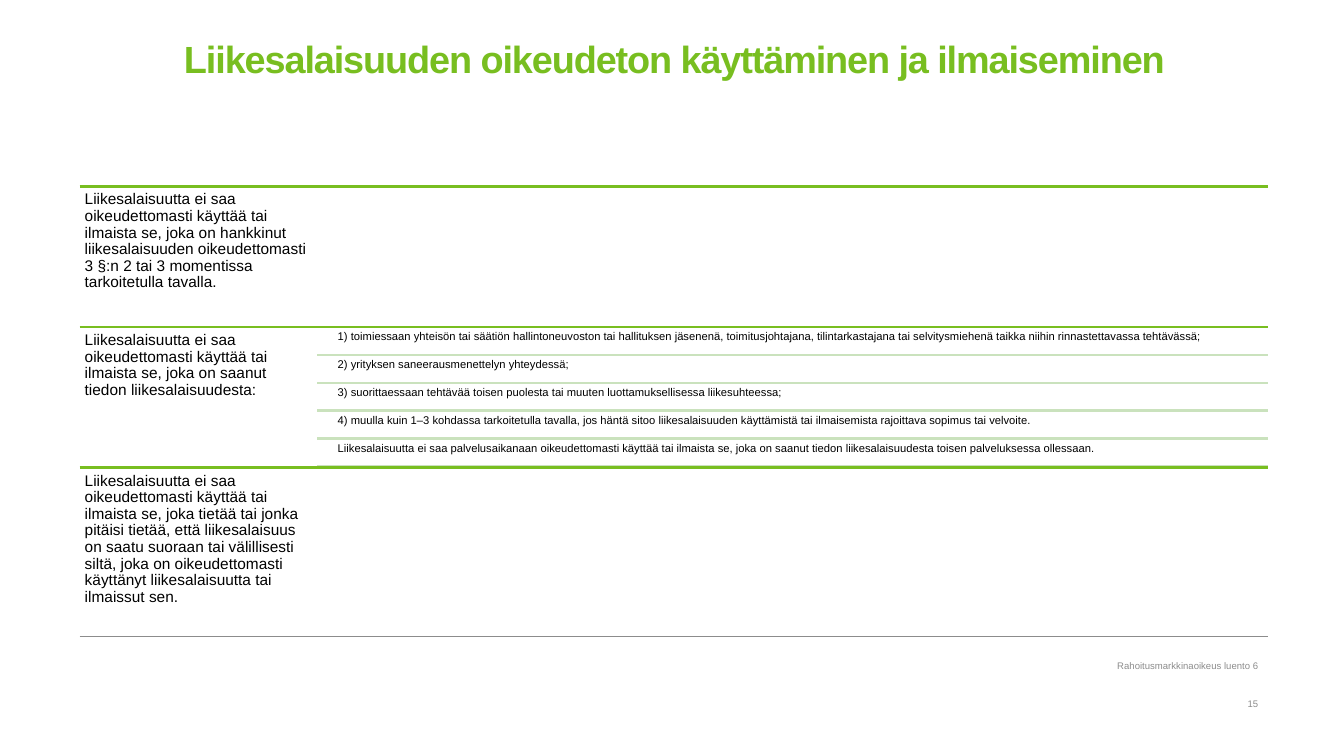
"""Build the slide on unlawful use and disclosure of trade secrets."""
from dataclasses import dataclass

from lxml.etree import SubElement
from pptx import Presentation
from pptx.dml.color import RGBColor
from pptx.enum.shapes import MSO_CONNECTOR as Conn
from pptx.enum.text import MSO_ANCHOR as Anchor, MSO_AUTO_SIZE as AutoSize, PP_ALIGN as Align
from pptx.oxml.ns import qn
from pptx.slide import Slide
from pptx.text.text import TextFrame, _Run as Run
from pptx.util import Inches, Pt

COLORS = {"green": "78BE20", "pale": "CAE2BD", "text": "000000", "grey": "8C8C8C"}
FONT = "Arial"
LEFT, TOP = 0.79, 1.85
WIDTH, COLUMNS = 11.79, 5
COL = WIDTH / COLUMNS
ROW = 1.395
RIGHT = LEFT + WIDTH
ITEM_LEFT, ITEM_OFFSET = 3.32, 0.01
ITEM_STEP, ITEM_HEIGHT = 0.277, 0.26


@dataclass(frozen=True)
class Rule:
    """A prohibition with its optional cases."""

    text: str
    cases: tuple[str, ...] = ()


@dataclass(frozen=True)
class Footer:
    """A right-aligned note at the foot of the slide."""

    text: str
    top: float


RULES = [
    Rule("Liikesalaisuutta ei saa oikeudettomasti käyttää tai ilmaista se, joka on hankkinut "
         "liikesalaisuuden oikeudettomasti 3 §:n 2 tai 3 momentissa tarkoitetulla tavalla."),
    Rule("Liikesalaisuutta ei saa oikeudettomasti käyttää tai ilmaista se, joka on saanut "
         "tiedon liikesalaisuudesta:",
         ("1) toimiessaan yhteisön tai säätiön hallintoneuvoston tai hallituksen jäsenenä, "
          "toimitusjohtajana, tilintarkastajana tai selvitysmiehenä taikka niihin "
          "rinnastettavassa tehtävässä;",
          "2) yrityksen saneerausmenettelyn yhteydessä;",
          "3) suorittaessaan tehtävää toisen puolesta tai muuten luottamuksellisessa "
          "liikesuhteessa;",
          "4) muulla kuin 1–3 kohdassa tarkoitetulla tavalla, jos häntä sitoo liikesalaisuuden "
          "käyttämistä tai ilmaisemista rajoittava sopimus tai velvoite.",
          "Liikesalaisuutta ei saa palvelusaikanaan oikeudettomasti käyttää tai ilmaista se, "
          "joka on saanut tiedon liikesalaisuudesta toisen palveluksessa ollessaan.")),
    Rule("Liikesalaisuutta ei saa oikeudettomasti käyttää tai ilmaista se, joka tietää tai "
         "jonka pitäisi tietää, että liikesalaisuus on saatu suoraan tai välillisesti siltä, "
         "joka on oikeudettomasti käyttänyt liikesalaisuutta tai ilmaissut sen."),
]
FOOTERS = [Footer("Rahoitusmarkkinaoikeus luento 6", 6.51), Footer("15", 6.89)]


def add_line(s: Slide, left: float, y: float, color: str, width: float) -> None:
    """Draw a horizontal line to the right margin."""
    line = s.shapes.add_connector(Conn.STRAIGHT, Inches(left), Inches(y), Inches(RIGHT), Inches(y))
    line.line.color.rgb = RGBColor.from_string(COLORS[color])
    line.line.width = Pt(width)
    SubElement(line._element.spPr, qn("a:effectLst"))


def fill_text(tf: TextFrame, text: str, size: float, color: str, align: Align,
              spacing: float, insets: tuple[float, float, float, float]) -> Run:
    """Write one formatted paragraph and return its run."""
    tf.word_wrap = True
    tf.auto_size = AutoSize.NONE
    tf.margin_left, tf.margin_top, tf.margin_right, tf.margin_bottom = map(Inches, insets)
    p = tf.paragraphs[0]
    p.alignment, p.line_spacing = align, spacing
    r = p.add_run()
    r.text = text
    r.font.name, r.font.size = FONT, Pt(size)
    r.font.color.rgb = RGBColor.from_string(COLORS[color])
    return r


def add_text(s: Slide, left: float, top: float, width: float, height: float,
             text: str, size: float, inset: float) -> None:
    """Add a left-aligned body text box."""
    box = s.shapes.add_textbox(Inches(left), Inches(top), Inches(width), Inches(height))
    fill_text(box.text_frame, text, size, "text", Align.LEFT, 0.9, (inset,) * 4)


def add_title(s: Slide, text: str) -> None:
    """Place and format the title."""
    sp = s.shapes.title
    sp.left, sp.top, sp.width, sp.height = map(Inches, (LEFT, 0.42, WIDTH, 1.31))
    sp.text_frame.vertical_anchor = Anchor.TOP
    r = fill_text(sp.text_frame, text, 27, "green", Align.CENTER, 0.85, (0, 0, 0, 0))
    r.font.bold = True
    r._r.get_or_add_rPr().set("spc", "-80")


def add_rule(s: Slide, rule: Rule, top: float) -> None:
    """Draw one rule row with its cases."""
    add_line(s, LEFT, top, "green", 2)
    add_text(s, LEFT, top, COL, ROW, rule.text, 11, 0.05)
    for i, case in enumerate(rule.cases):
        y = top + ITEM_OFFSET + i * ITEM_STEP
        add_text(s, ITEM_LEFT, y, RIGHT - ITEM_LEFT, ITEM_HEIGHT, case, 8, 0.03)
        add_line(s, LEFT + COL, top + (i + 1) * ITEM_STEP, "pale", 2)


def add_footer(s: Slide, footer: Footer) -> None:
    """Add one footer note."""
    box = s.shapes.add_textbox(Inches(7.2), Inches(footer.top), Inches(5.28), Inches(0.18))
    box.text_frame.vertical_anchor = Anchor.MIDDLE
    fill_text(box.text_frame, footer.text, 6.8, "grey", Align.RIGHT, 1.0, (0.1, 0.05, 0, 0.05))


def main() -> None:
    """Build and save the presentation."""
    prs = Presentation()
    prs.slide_width, prs.slide_height = Inches(13.33), Inches(7.5)
    s = prs.slides.add_slide(prs.slide_layouts[5])
    add_line(s, LEFT, 6.31, "grey", 0.75)
    add_title(s, "Liikesalaisuuden oikeudeton käyttäminen ja ilmaiseminen")
    for i, rule in enumerate(RULES):
        add_rule(s, rule, TOP + i * ROW)
    for footer in FOOTERS:
        add_footer(s, footer)
    prs.save("out.pptx")


if __name__ == "__main__":
    main()
